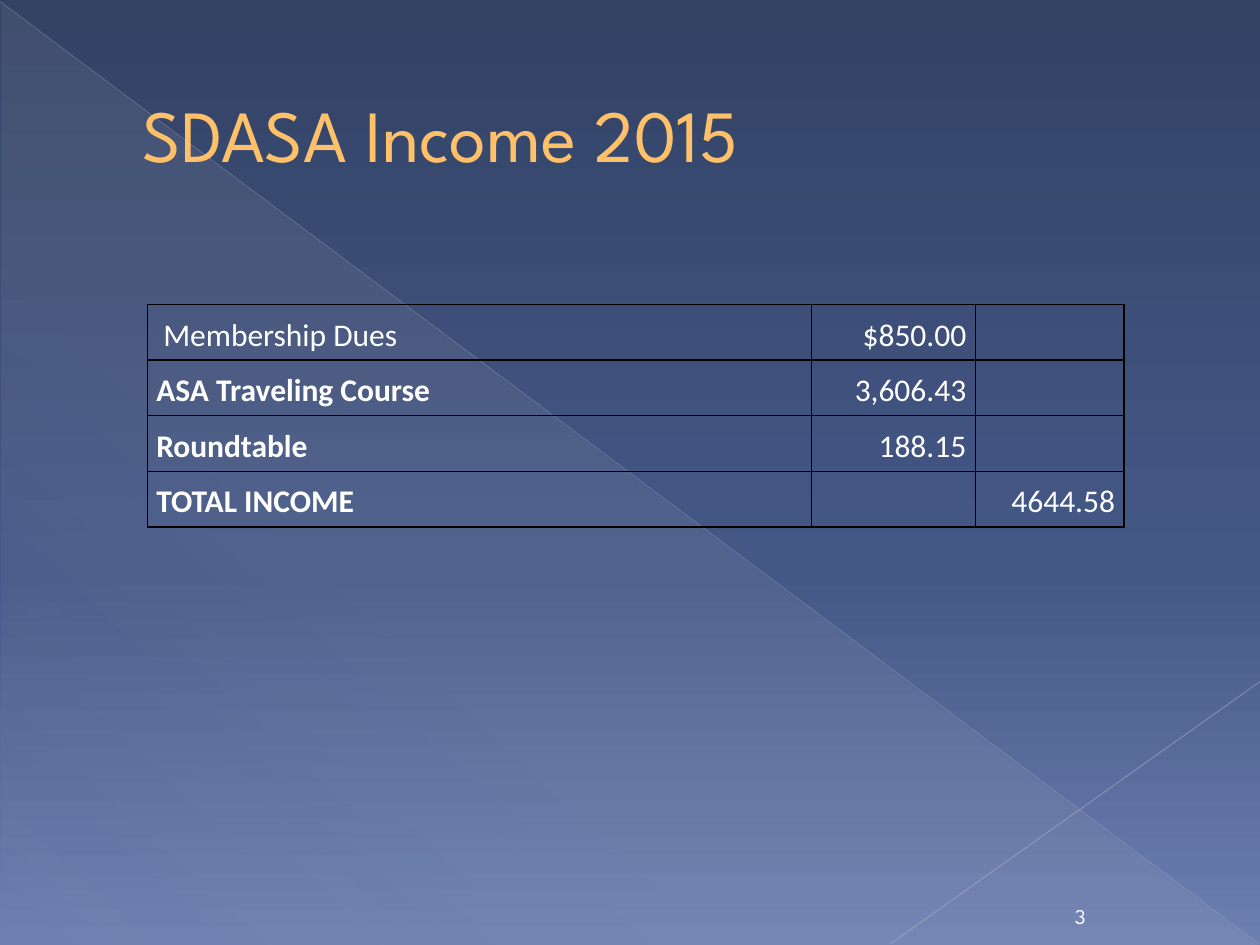
"""Build the SDASA income slide with its gradient backdrop and table."""
import pptx
import pptx.dml.color
import pptx.enum.shapes
import pptx.enum.text
import pptx.oxml
import pptx.oxml.ns
import pptx.util

Cm, Pt = pptx.util.Cm, pptx.util.Pt
ALIGN = pptx.enum.text.PP_ALIGN
ANCHOR = pptx.enum.text.MSO_ANCHOR
qn = pptx.oxml.ns.qn


def rgb(value):
    return pptx.dml.color.RGBColor.from_string(value)


def xml(text):
    head, sep, tail = text.partition(">")
    if head.endswith("/"):
        head, sep = head[:-1], "/>"
    return pptx.oxml.parse_xml(f"{head} {pptx.oxml.ns.nsdecls('a')}{sep}{tail}")


def solid(color):
    return f'<a:solidFill><a:srgbClr val="{color}"/></a:solidFill>'


class Deck:
    display, body = "League Spartan", "Calibri"
    white, gold, border = "FFFFFF", "FFC06A", "000000"

    def __init__(self, prs):
        self.s = prs.slides.add_slide(prs.slide_layouts[6])

    def gradient(self, fill, parent, stops, angle):
        fill.gradient()
        fill.gradient_angle = 360 - angle
        gs_list = next(parent.iter(qn("a:gsLst")))
        for gs in list(gs_list):
            gs_list.remove(gs)
        for pos, color, alpha in stops:
            gs_list.append(xml(
                f'<a:gs pos="{pos * 1000}"><a:srgbClr val="{color}">'
                f'<a:alpha val="{alpha * 1000}"/></a:srgbClr></a:gs>'))

    def background(self, stops, angle):
        self.gradient(self.s.background.fill, self.s.element, stops, angle)

    def triangle(self, x, y, w, h, stops, angle):
        sp = self.s.shapes.add_shape(
            pptx.enum.shapes.MSO_SHAPE.RIGHT_TRIANGLE, Cm(x), Cm(y), Cm(w), Cm(h))
        sp.shadow.inherit = False
        sp.line.fill.background()
        self.gradient(sp.fill, sp.element, stops, angle)

    def line(self, x1, y1, x2, y2, color, width, alpha):
        c = self.s.shapes.add_connector(
            pptx.enum.shapes.MSO_CONNECTOR.STRAIGHT, Cm(x1), Cm(y1), Cm(x2), Cm(y2))
        c.line.color.rgb = rgb(color)
        c.line.width = Pt(width)
        sp_pr = c.element.spPr
        next(sp_pr.iter(qn("a:srgbClr"))).append(xml(f'<a:alpha val="{alpha * 1000}"/>'))
        sp_pr.append(xml("<a:effectLst/>"))

    def style(self, p, size, font, color, align, bold=False):
        p.alignment = align
        for r in p.runs:
            r.font.size = Pt(size)
            r.font.name = font
            r.font.bold = bold
            r.font.color.rgb = rgb(color)

    def text(self, x, y, w, h, text, size, color, align, anchor, indent=0, outline=None):
        tf = self.s.shapes.add_textbox(Cm(x), Cm(y), Cm(w), Cm(h)).text_frame
        tf.word_wrap = True
        tf.vertical_anchor = anchor
        tf.margin_left += Cm(indent)
        tf.text = text
        p = tf.paragraphs[0]
        self.style(p, size, self.display, color, align)
        if outline:
            p.runs[0].font._element.insert(0, xml(f'<a:ln w="{Pt(0.5)}">{solid(outline)}</a:ln>'))

    def cell(self, cell, text, align, bold):
        cell.fill.background()
        cell.vertical_anchor = ANCHOR.MIDDLE
        cell.margin_left = cell.margin_right = Cm(0.18)
        cell.margin_top = cell.margin_bottom = 0
        cell.text = text
        p = cell.text_frame.paragraphs[0]
        p.line_spacing = 1.15
        self.style(p, 18, self.body, self.white, align, bold)
        for i, side in enumerate(("lnL", "lnR", "lnT", "lnB")):
            cell._tc.get_or_add_tcPr().insert(
                i, xml(f'<a:{side} w="{Pt(1)}">{solid(self.border)}</a:{side}>'))

    def table(self, x, y, widths, row_height, rows):
        frame = self.s.shapes.add_table(
            len(rows), len(widths), Cm(x), Cm(y), Cm(sum(widths)), Cm(row_height * len(rows)))
        table = frame.table
        table.first_row = table.horz_banding = False
        for column, width in zip(table.columns, widths):
            column.width = Cm(width)
        for i, values in enumerate(rows):
            table.rows[i].height = Cm(row_height)
            for j, value in enumerate(values):
                self.cell(table.cell(i, j), value, ALIGN.RIGHT if j else ALIGN.LEFT,
                          bold=i > 0 and j == 0)


def main():
    prs = pptx.Presentation()
    prs.slide_width, prs.slide_height = Cm(25.4), Cm(19.05)
    deck = Deck(prs)
    deck.background([(0, "334265", 100), (60, "445887", 100), (100, "6C7FB1", 100)], 90)
    deck.triangle(0.03, 0.05, 25.35, 19,
                  [(0, "D4D4D6", 10), (70, "D4D4D6", 8), (100, "D4D4D6", 1)], 133)
    deck.line(0, 0.03, 25.37, 19.02, "B9BDC8", 0.39, 35)
    deck.line(25.4, 13.74, 17.96, 19.02, "C1C4CE", 0.47, 45)
    deck.text(1.27, 0.74, 22.86, 3.89, "SDASA Income 2015", 42, deck.gold,
              ALIGN.LEFT, ANCHOR.MIDDLE, indent=1.35, outline="A67800")
    deck.table(2.97, 6.14, [13.39, 3.3, 3], 1.12, [
        (" Membership Dues", "$850.00", ""),
        ("ASA Traveling Course", "3,606.43", ""),
        ("Roundtable", "188.15", ""),
        ("TOTAL INCOME", "", "4644.58"),
    ])
    deck.text(21.08, 18, 1.4, 0.84, "3", 12, deck.white, ALIGN.CENTER, ANCHOR.BOTTOM)
    prs.save("out.pptx")


if __name__ == "__main__":
    main()
